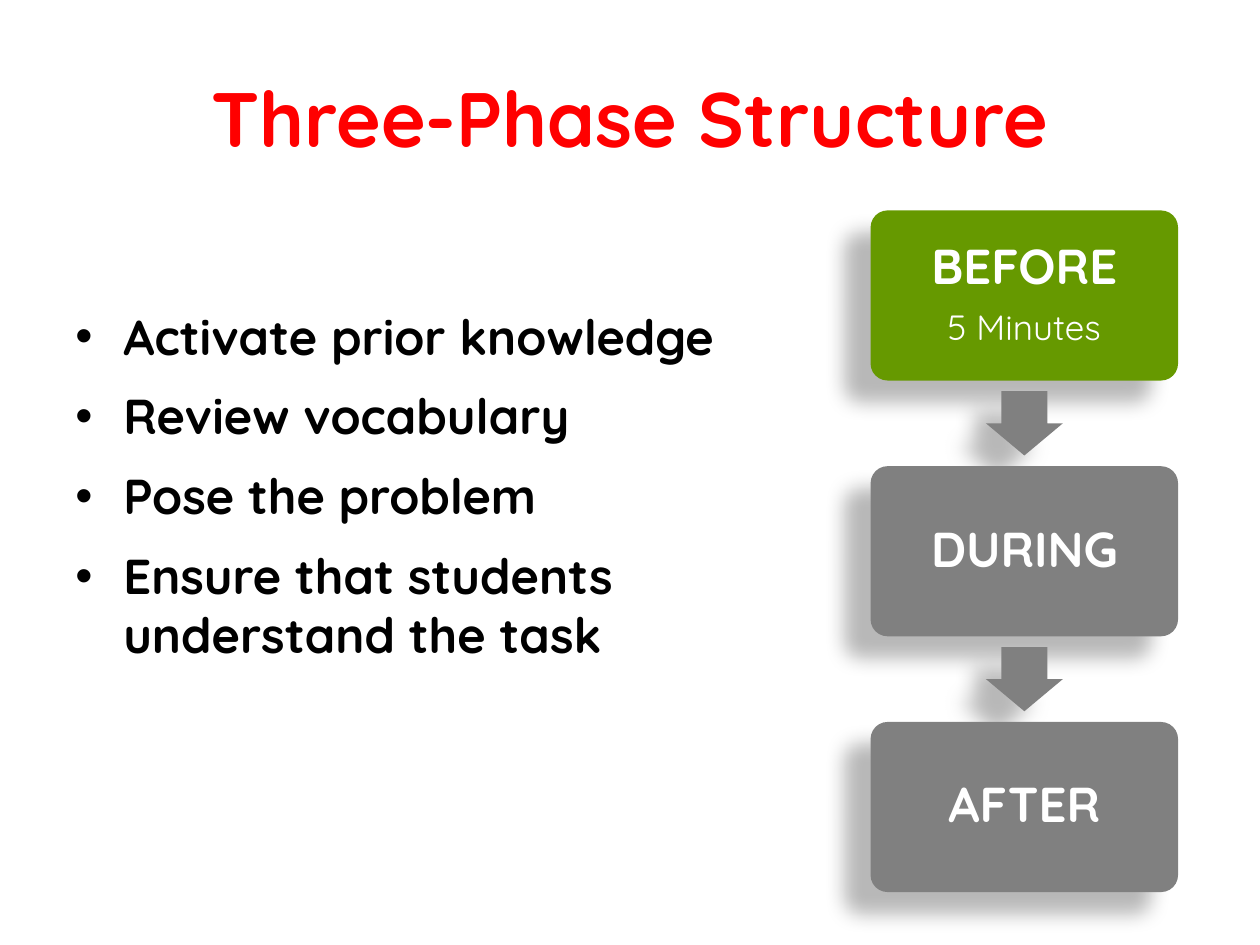
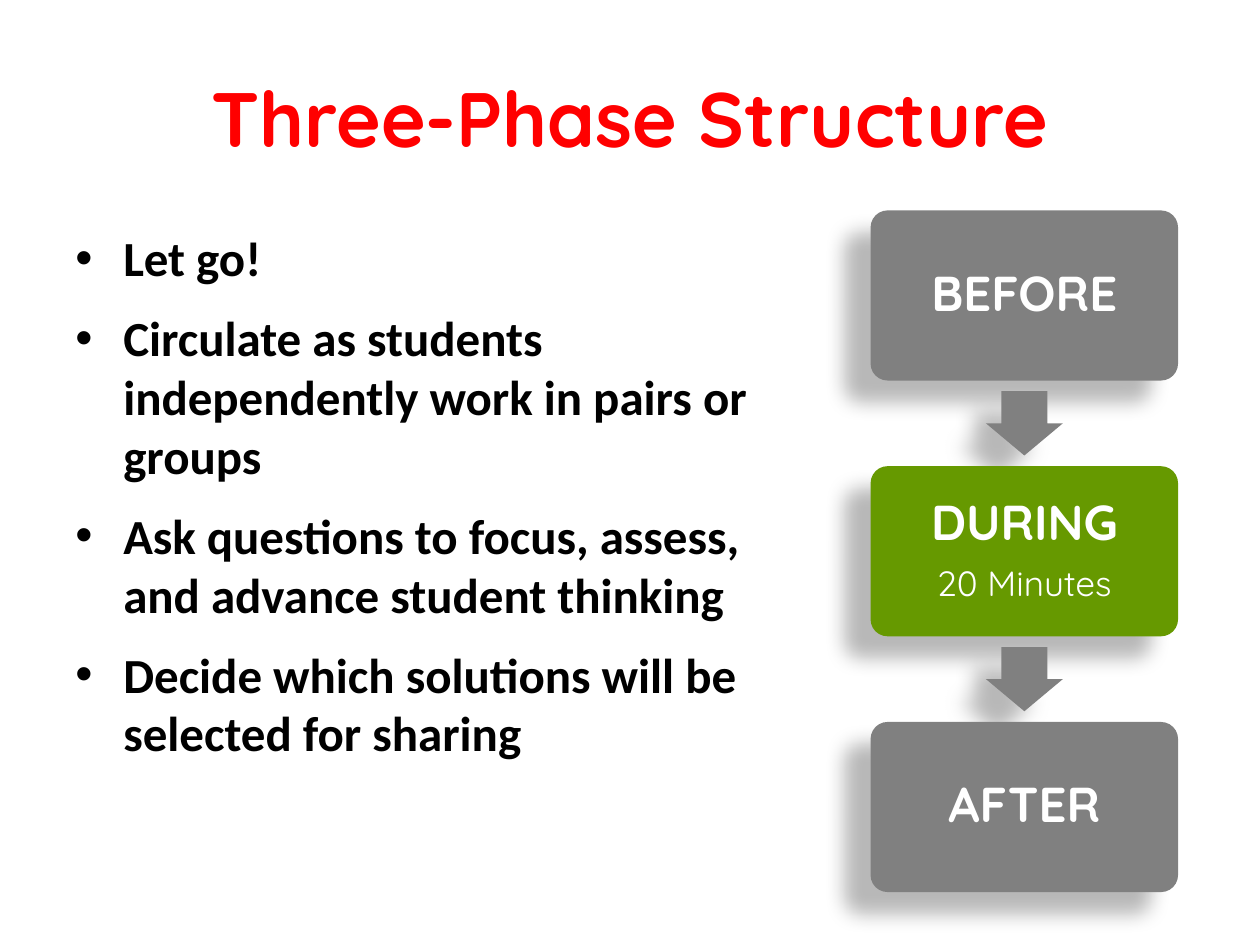
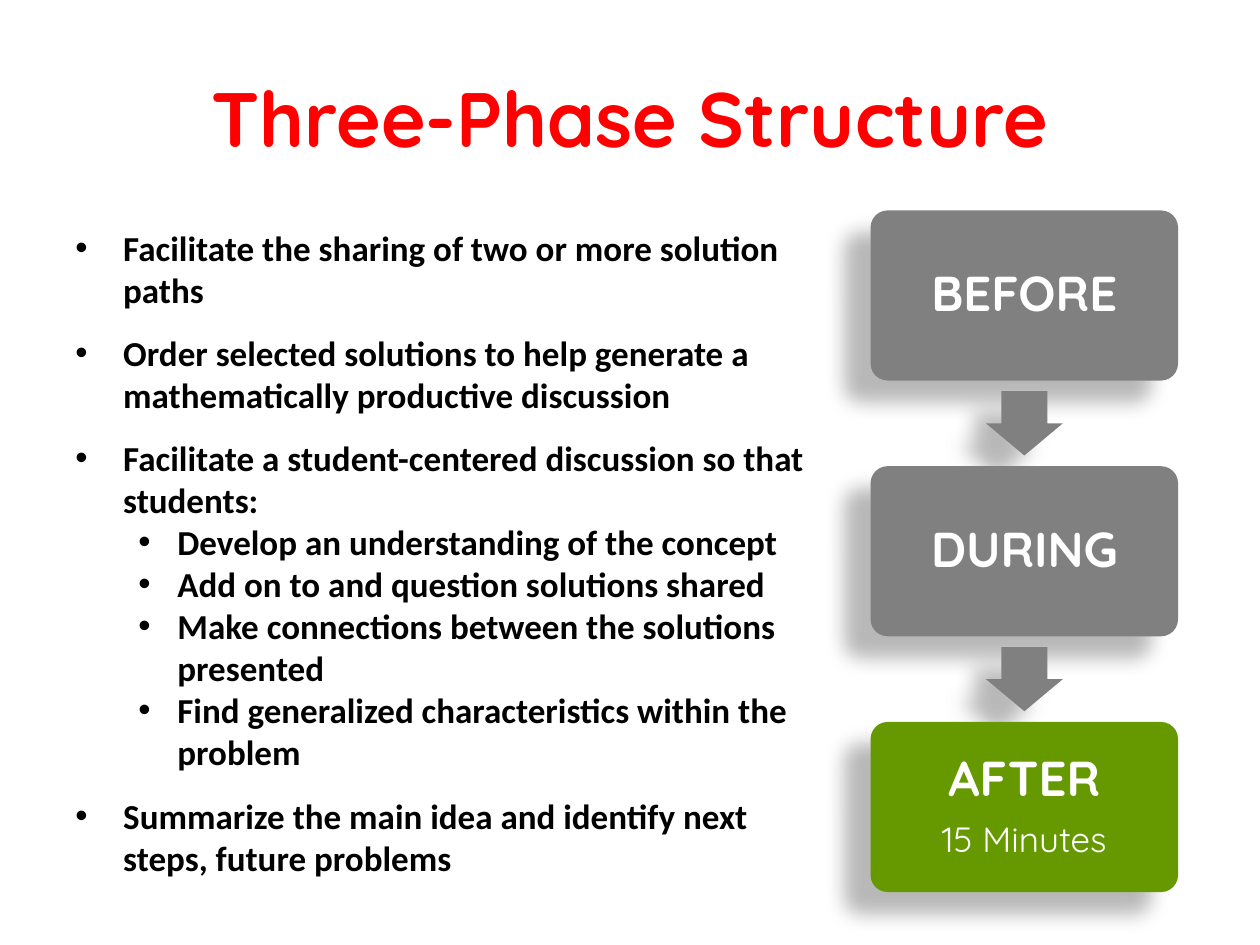
from lxml import etree
from pptx import Presentation
from pptx.dml.color import RGBColor
from pptx.enum import shapes, text
from pptx.oxml import ns
from pptx.util import Inches, Pt

RED = RGBColor(0xFF, 0x00, 0x00)
BLACK = RGBColor(0x00, 0x00, 0x00)
WHITE = RGBColor(0xFF, 0xFF, 0xFF)
GREEN = RGBColor(0x66, 0x99, 0x00)
GRAY = RGBColor(0x80, 0x80, 0x80)

HEADING_FONT = "Quicksand"
BODY_FONT = "Calibri"
PHASES = ("BEFORE", "DURING", "AFTER")
INDENTS = ((0.38, -0.38), (0.81, -0.31))

PHASE_LEFT, PHASE_TOP = 6.91, 1.67
PHASE_WIDTH, PHASE_HEIGHT = 2.44, 1.35
PHASE_PITCH = 2.03
ARROW_WIDTH, ARROW_HEIGHT = 0.61, 0.51

LESSON = (
    {
        "minutes": "5 Minutes",
        "area": (0.5, 2.38, 5.58, 4.32),
        "font": HEADING_FONT,
        "size": 28,
        "actions": (
            (0, "Activate prior knowledge"),
            (0, "Review vocabulary"),
            (0, "Pose the problem"),
            (0, "Ensure that students understand the task"),
        ),
    },
    {
        "minutes": "20 Minutes",
        "area": (0.5, 1.76, 5.75, 4.32),
        "font": BODY_FONT,
        "size": 28,
        "actions": (
            (0, "Let go!"),
            (0, "Circulate as students independently work in pairs or groups"),
            (0, "Ask questions to focus, assess, and advance student thinking"),
            (0, "Decide which solutions will be selected for sharing"),
        ),
    },
    {
        "minutes": "15 Minutes",
        "area": (0.5, 1.75, 6, 4.32),
        "font": BODY_FONT,
        "size": 20,
        "actions": (
            (0, "Facilitate the sharing of two or more solution paths"),
            (0, "Order selected solutions to help generate a mathematically "
                "productive discussion"),
            (0, "Facilitate a student-centered discussion so that students:"),
            (1, "Develop an understanding of the concept"),
            (1, "Add on to and question solutions shared"),
            (1, "Make connections between the solutions presented"),
            (1, "Find generalized characteristics within the problem"),
            (0, "Summarize the main idea and identify next steps, future problems"),
        ),
    },
)


def add_bullet(paragraph, level):
    paragraph.level = level
    margin, hanging = INDENTS[level]
    properties = paragraph._p.get_or_add_pPr()
    properties.set("marL", str(Inches(margin)))
    properties.set("indent", str(Inches(hanging)))
    etree.SubElement(properties, ns.qn("a:buFont"), typeface="Arial")
    etree.SubElement(properties, ns.qn("a:buChar"), char="•")


def write(frame, words, *, size, color, font=HEADING_FONT, bold=True,
          align=text.PP_ALIGN.LEFT, before=0, after=0, spacing=1.0, level=None):
    first = frame.paragraphs[0]
    is_first = not first.runs
    paragraph = first if is_first else frame.add_paragraph()
    if level is not None:
        add_bullet(paragraph, level)
    paragraph.alignment = align
    paragraph.line_spacing = spacing
    paragraph.space_before = Pt(0 if is_first else before)
    paragraph.space_after = Pt(after)
    run = paragraph.add_run()
    run.text = words
    run.font.name = font
    run.font.size = Pt(size)
    run.font.bold = bold
    run.font.color.rgb = color


class PhaseDeck:
    def __init__(self):
        self.presentation = Presentation()
        self.presentation.slide_width = Inches(10)
        self.presentation.slide_height = Inches(7.5)
        self.slide = None

    def new_slide(self):
        self.slide = self.presentation.slides.add_slide(
            self.presentation.slide_layouts[6])

    def text_area(self, area, anchor=text.MSO_ANCHOR.TOP):
        frame = self.slide.shapes.add_textbox(*map(Inches, area)).text_frame
        frame.word_wrap = True
        frame.vertical_anchor = anchor
        return frame

    def title(self, words):
        frame = self.text_area((0.5, 0.3, 9, 1.25), text.MSO_ANCHOR.MIDDLE)
        write(frame, words, size=44, color=RED, align=text.PP_ALIGN.CENTER)

    def actions(self, items, area, font, size):
        frame = self.text_area(area)
        following = [level for level, _ in items[1:]] + [0]
        for (level, words), next_level in zip(items, following):
            write(frame, words, size=size, color=BLACK, font=font, level=level,
                  before=0 if level else 6, after=0 if next_level else 6)

    def shadowed(self, kind, area, color, *adjustments):
        shape = self.slide.shapes.add_shape(kind, *map(Inches, area))
        for index, value in enumerate(adjustments):
            shape.adjustments[index] = value
        shape.fill.solid()
        shape.fill.fore_color.rgb = color
        shape.line.fill.background()
        shape.shadow.inherit = False
        effects = shape._element.spPr.find(ns.qn("a:effectLst"))
        shadow = etree.SubElement(
            effects, ns.qn("a:outerShdw"), blurRad=str(Pt(11.8)),
            dist=str(Pt(19.7)), dir="8460000", algn="tl", rotWithShape="0")
        tint = etree.SubElement(shadow, ns.qn("a:srgbClr"), val=str(BLACK))
        etree.SubElement(tint, ns.qn("a:alpha"), val="28000")
        return shape

    def phase(self, name, top, minutes=None):
        box = self.shadowed(
            shapes.MSO_SHAPE.ROUNDED_RECTANGLE,
            (PHASE_LEFT, top, PHASE_WIDTH, PHASE_HEIGHT),
            GREEN if minutes else GRAY, 0.1)
        frame = box.text_frame
        frame.word_wrap = True
        frame.vertical_anchor = text.MSO_ANCHOR.MIDDLE
        label = {"color": WHITE, "align": text.PP_ALIGN.CENTER, "spacing": 0.9}
        write(frame, name, size=28, after=8.75 if minutes else 0, **label)
        if minutes:
            write(frame, minutes, size=20, bold=False, **label)

    def arrow(self, phase_top):
        gap = PHASE_PITCH - PHASE_HEIGHT
        left = PHASE_LEFT + (PHASE_WIDTH - ARROW_WIDTH) / 2
        top = phase_top + PHASE_HEIGHT + (gap - ARROW_HEIGHT) / 2
        self.shadowed(shapes.MSO_SHAPE.DOWN_ARROW,
                      (left, top, ARROW_WIDTH, ARROW_HEIGHT), GRAY, 0.6, 0.5)

    def phases(self, current, minutes):
        for index, name in enumerate(PHASES):
            top = PHASE_TOP + index * PHASE_PITCH
            self.phase(name, top, minutes if index == current else None)
            if index < len(PHASES) - 1:
                self.arrow(top)


def main():
    deck = PhaseDeck()
    for current, part in enumerate(LESSON):
        deck.new_slide()
        deck.phases(current, part["minutes"])
        deck.title("Three-Phase Structure")
        deck.actions(part["actions"], part["area"], part["font"], part["size"])
    deck.presentation.save("out.pptx")


if __name__ == "__main__":
    main()
